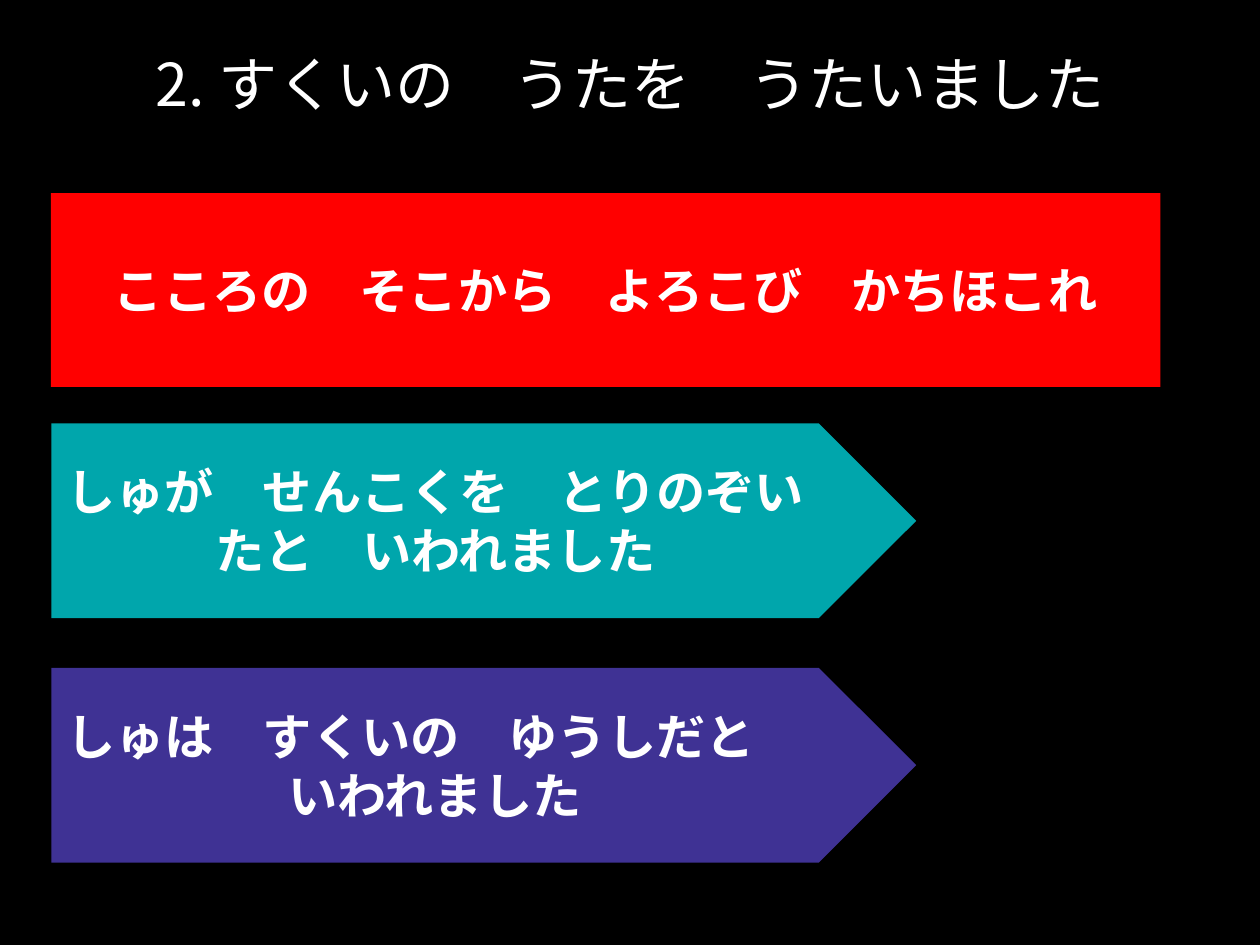
from dataclasses import dataclass

from lxml.etree import SubElement
from pptx import Presentation
from pptx.dml.color import RGBColor
from pptx.enum.shapes import MSO_SHAPE
from pptx.enum.text import MSO_ANCHOR, PP_ALIGN
from pptx.oxml.ns import qn
from pptx.shapes.autoshape import Shape
from pptx.slide import Slide
from pptx.util import Inches, Pt

SLIDE_W, SLIDE_H = Inches(14.22), Inches(10.67)
FONT = "Noto Sans CJK JP"
INSET = Inches(0.06)
FRAME_FORMAT = {
    "word_wrap": True,
    "vertical_anchor": MSO_ANCHOR.MIDDLE,
    "margin_left": INSET,
    "margin_right": INSET,
    "margin_top": INSET,
    "margin_bottom": INSET,
}
TITLE_FONT = {"name": FONT, "size": Pt(48), "bold": False}
VERSE_FONT = {"name": FONT, "size": Pt(40), "bold": True}


@dataclass
class Box:
    """Position and size in percent of the slide."""
    left: float
    top: float
    width: float
    height: float

    def emu(self) -> tuple[int, ...]:
        return tuple(round(share * side / 100) for share, side in (
            (self.left, SLIDE_W), (self.top, SLIDE_H),
            (self.width, SLIDE_W), (self.height, SLIDE_H)))


@dataclass
class Verse:
    kind: MSO_SHAPE
    box: Box
    color: str
    lines: list[str]


TITLE = "2. すくいの うたを うたいました".replace(" う", "　う")
VERSES = [
    Verse(MSO_SHAPE.RECTANGLE, Box(4.04, 20.43, 88.05, 20.52), "FF0000",
          ["こころの　そこから　よろこび　かちほこれ"]),
    Verse(MSO_SHAPE.RIGHT_ARROW, Box(4.08, 44.8, 68.64, 20.62), "00A6AC",
          ["しゅが　せんこくを　とりのぞいたと　いわれました"]),
    Verse(MSO_SHAPE.RIGHT_ARROW, Box(4.08, 70.67, 68.64, 20.62), "3F3294",
          ["しゅは　すくいの　ゆうしだと　", "いわれました"]),
]


def rgb(color: str) -> RGBColor:
    return RGBColor.from_string(color)


def write(sp: Shape, lines: list[str], font: dict) -> None:
    tf = sp.text_frame
    for name, value in FRAME_FORMAT.items():
        setattr(tf, name, value)
    for i, line in enumerate(lines):
        p = tf.add_paragraph() if i else tf.paragraphs[0]
        p.alignment = PP_ALIGN.CENTER
        r = p.add_run()
        r.text = line
        r.font.color.rgb = rgb("FFFFFF")
        for name, value in font.items():
            setattr(r.font, name, value)
        # Japanese glyphs take the East Asian typeface
        SubElement(r.font._element, qn("a:ea"), typeface=FONT)


def draw_verse(s: Slide, verse: Verse) -> None:
    sp = s.shapes.add_shape(verse.kind, *verse.box.emu())
    sp.shadow.inherit = False
    sp.fill.solid()
    sp.fill.fore_color.rgb = rgb(verse.color)
    sp.line.fill.background()
    if verse.kind == MSO_SHAPE.RIGHT_ARROW:
        # The shaft is as tall as the head
        sp.adjustments[0] = 1
        sp.adjustments[1] = 0.5
    write(sp, verse.lines, VERSE_FONT)


def main() -> None:
    prs = Presentation()
    prs.slide_width, prs.slide_height = SLIDE_W, SLIDE_H
    s = prs.slides.add_slide(prs.slide_layouts[6])

    # Background
    s.background.fill.solid()
    s.background.fill.fore_color.rgb = rgb("000000")

    # Title
    write(s.shapes.add_textbox(*Box(0, 3.47, 100, 10.59).emu()), [TITLE], TITLE_FONT)

    # Verses
    for verse in VERSES:
        draw_verse(s, verse)

    prs.save("out.pptx")


if __name__ == "__main__":
    main()
